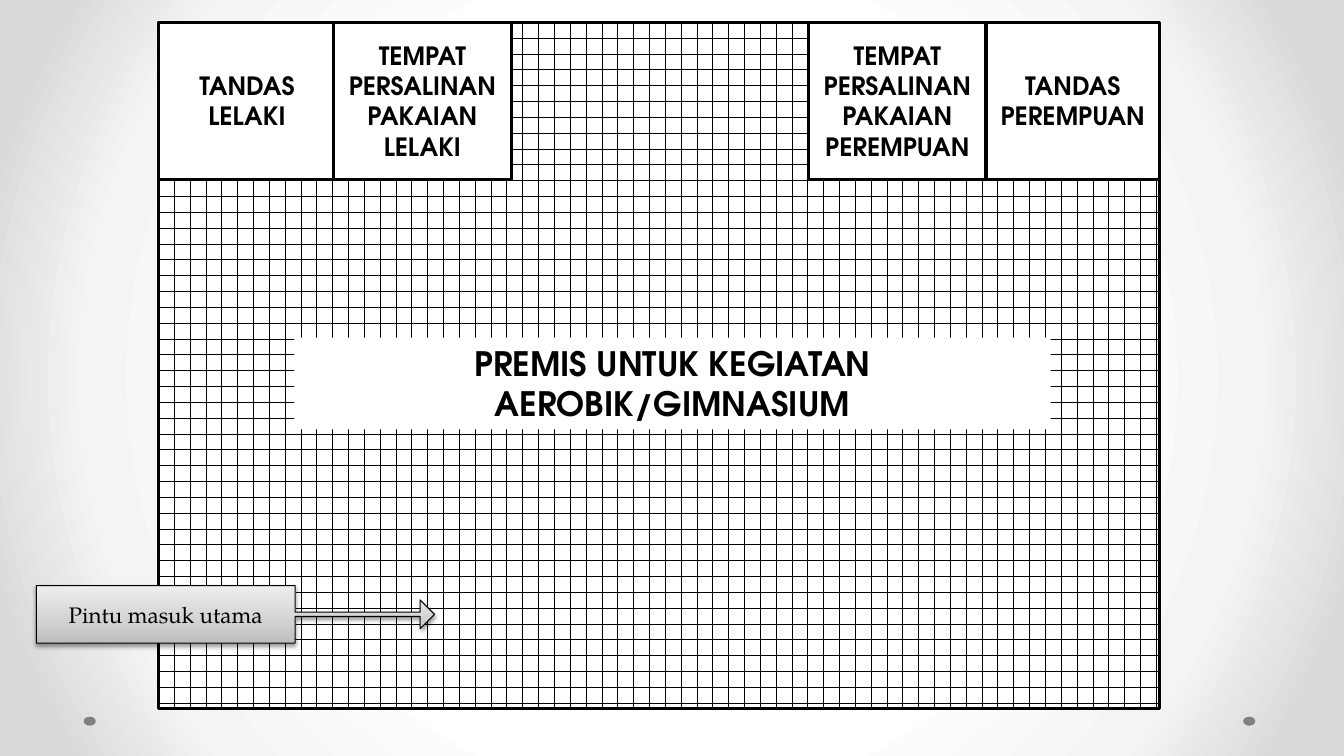
from lxml import etree
from pptx import Presentation
from pptx.dml.color import RGBColor
from pptx.enum import dml, shapes, text
from pptx.oxml import ns
from pptx.util import Inches, Pt

# Content: label, left, width
ROOMS = [
    ("TANDAS LELAKI", 1.57, 1.76),
    ("TEMPAT PERSALINAN PAKAIAN LELAKI", 3.31, 1.76),
    ("TEMPAT PERSALINAN PAKAIAN PEREMPUAN", 8.02, 1.76),
    ("TANDAS PEREMPUAN", 9.78, 1.72),
]
HALL = "PREMIS UNTUK KEGIATAN AEROBIK/GIMNASIUM"
ENTRANCE = "Pintu masuk utama"

# Layout in inches
SLIDE_W, SLIDE_H = 13.33, 7.5
PLAN_LEFT, PLAN_TOP, PLAN_W, PLAN_H = 1.57, 0.22, 9.93, 6.81
ROOM_H = 1.56
DOT_LEFTS = (0.83, 12.33)

# Style
PLAN_FONT, ENTRANCE_FONT = "TeX Gyre Adventor", "TeX Gyre Pagella"
BLACK = RGBColor(0x00, 0x00, 0x00)
WHITE = RGBColor(0xFF, 0xFF, 0xFF)
GREY = RGBColor(0x80, 0x80, 0x80)
BACKDROP_STOPS = [(50, WHITE), (76, RGBColor(0xF4, 0xF4, 0xF4)),
                  (92, RGBColor(0xDA, 0xDA, 0xDA))]
ENTRANCE_STOPS = [(0, RGBColor(0xBD, 0xBD, 0xBD)),
                  (35, RGBColor(0xD1, 0xD1, 0xD1)),
                  (100, RGBColor(0xEE, 0xEE, 0xEE))]


def add_child(parent, tag, **attributes):
    child = etree.SubElement(parent, ns.qn(tag))
    for key, value in attributes.items():
        child.set(key, str(value))
    return child


def set_gradient(fill, owner, stops):
    """Give the fill these stops and return its element for the direction."""
    fill.gradient()
    gradient = owner.xpath(".//a:gradFill")[0]
    for child in list(gradient):
        gradient.remove(child)
    stop_list = add_child(gradient, "a:gsLst")
    for percent, color in stops:
        stop = add_child(stop_list, "a:gs", pos=percent * 1000)
        add_child(stop, "a:srgbClr", val=color)
    return gradient


def add_part(slide, kind, left, top, width, height, fill=None, line=0):
    part = slide.shapes.add_shape(
        kind, *(Inches(v) for v in (left, top, width, height)))
    part.shadow.inherit = False
    if fill is not None:
        part.fill.solid()
        part.fill.fore_color.rgb = fill
    if line:
        part.line.color.rgb = BLACK
        part.line.width = Pt(line)
    else:
        part.line.fill.background()
    return part


def write(part, words, size, font=PLAN_FONT, bold=True,
          anchor=text.MSO_ANCHOR.MIDDLE):
    frame = part.text_frame
    frame.word_wrap = True
    frame.vertical_anchor = anchor
    paragraph = frame.paragraphs[0]
    paragraph.alignment = text.PP_ALIGN.CENTER
    run = paragraph.add_run()
    run.text = words
    run.font.size = Pt(size)
    run.font.name = font
    run.font.bold = bold
    run.font.color.rgb = BLACK


def main():
    deck = Presentation()
    deck.slide_width, deck.slide_height = Inches(SLIDE_W), Inches(SLIDE_H)
    slide = deck.slides.add_slide(deck.slide_layouts[6])
    kinds = shapes.MSO_SHAPE

    # Backdrop: radial gradient and two corner dots
    glow = set_gradient(slide.background.fill, slide.element, BACKDROP_STOPS)
    circle = add_child(glow, "a:path", path="circle")
    add_child(circle, "a:fillToRect", l=50000, t=50000, r=50000, b=50000)
    for left in DOT_LEFTS:
        add_part(slide, kinds.OVAL, left, 7.11, 0.12, 0.09, GREY)

    # Gridded floor
    floor = add_part(slide, kinds.RECTANGLE, PLAN_LEFT, PLAN_TOP,
                     PLAN_W, PLAN_H, line=2.25)
    floor.fill.patterned()
    floor.fill.pattern = dml.MSO_PATTERN.DOTTED_GRID
    floor.fill.fore_color.rgb = BLACK
    floor.fill.back_color.rgb = WHITE

    # Rooms along the top wall
    for label, left, width in ROOMS:
        room = add_part(slide, kinds.RECTANGLE, left, PLAN_TOP,
                        width, ROOM_H, WHITE, 2.25)
        write(room, label, 18)

    # Main entrance
    entrance = add_part(slide, kinds.RIGHT_ARROW_CALLOUT,
                        0.36, 5.81, 3.95, 0.57, line=0.75)
    for index, share in enumerate((0.076, 0.25, 0.25, 0.65)):
        entrance.adjustments[index] = share
    sheen = set_gradient(entrance.fill, entrance.element, ENTRANCE_STOPS)
    add_child(sheen, "a:lin", ang=270 * 60000, scaled=1)
    effects = entrance.element.spPr.find(ns.qn("a:effectLst"))
    shadow = add_child(effects, "a:outerShdw", blurRad=Pt(3.1), dist=Pt(1.6),
                       dir=90 * 60000, rotWithShape=0)
    shade = add_child(shadow, "a:srgbClr", val=BLACK)
    add_child(shade, "a:alpha", val=38000)
    write(entrance, ENTRANCE, 16, ENTRANCE_FONT, bold=False)

    # Hall label
    hall = add_part(slide, kinds.RECTANGLE, 2.92, 3.35, 7.5, 0.91, WHITE)
    write(hall, HALL, 24, anchor=text.MSO_ANCHOR.TOP)
    hall.text_frame.auto_size = text.MSO_AUTO_SIZE.SHAPE_TO_FIT_TEXT

    deck.save("out.pptx")


if __name__ == "__main__":
    main()
